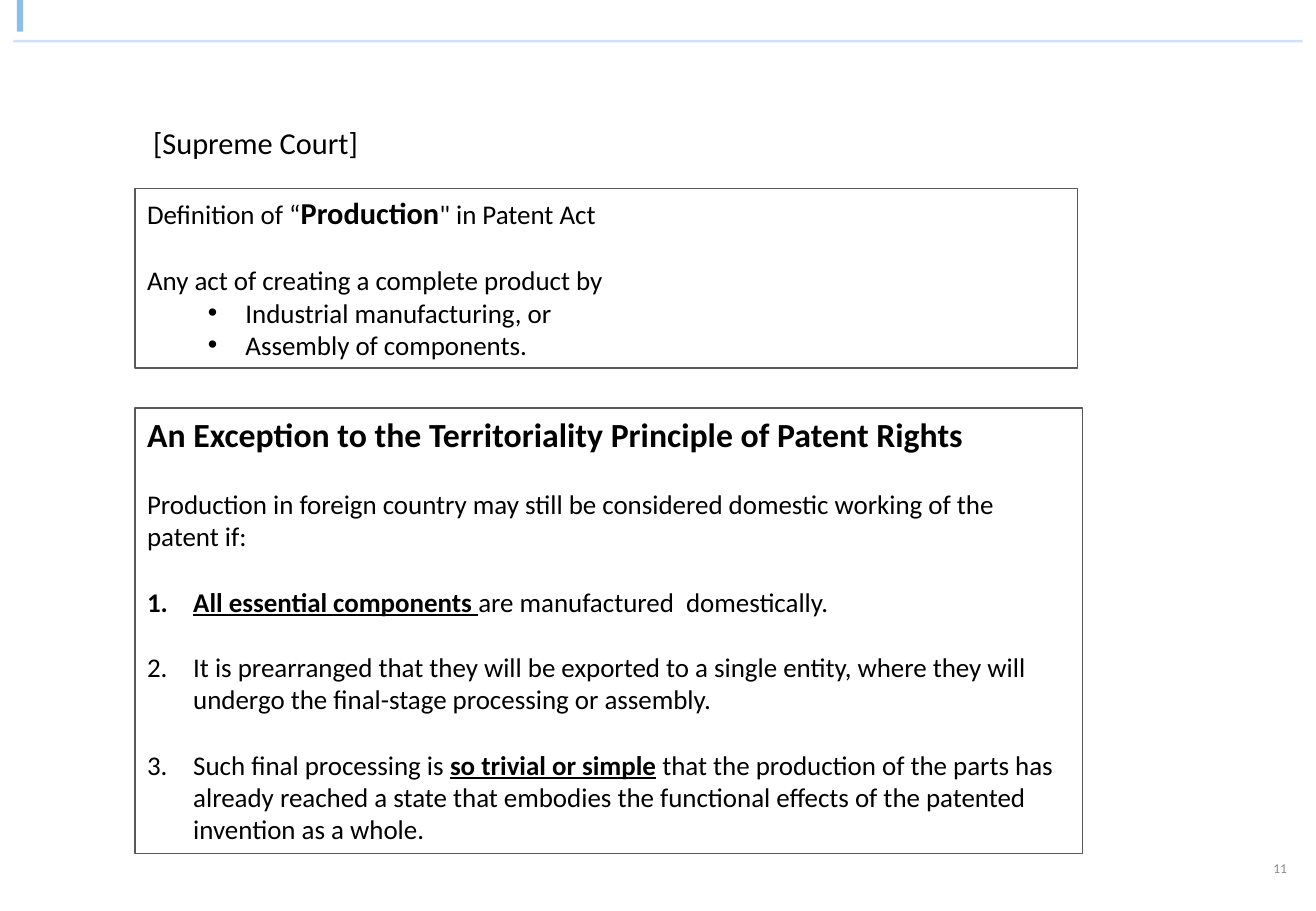
"""Build the slide on the Supreme Court's definition of production."""
from lxml import etree
from pptx import Presentation
from pptx import util as u
from pptx.dml.color import RGBColor
from pptx.enum import shapes, text
from pptx.oxml.ns import qn

presentation = Presentation()
presentation.slide_width = u.Inches(10.83)
presentation.slide_height = u.Inches(7.5)
slide = presentation.slides.add_slide(presentation.slide_layouts[3])

color = RGBColor.from_string


def percent(*lengths):
    """Turn alternating shares of the slide's width and height into lengths."""
    sides = (presentation.slide_width, presentation.slide_height)
    return [int(length * sides[i % 2] / 100) for i, length in enumerate(lengths)]


def write(paragraph, words, size=16, bold=False, underline=False, ink="000000"):
    """Add a formatted run of text to a paragraph."""
    run = paragraph.add_run()
    run.text = words
    run.font.name = "Calibri"
    run.font.size = u.Pt(size)
    run.font.bold = bold
    run.font.underline = underline
    run.font.color.rgb = color(ink)


accent = slide.shapes.add_shape(shapes.MSO_SHAPE.RECTANGLE, *percent(1.29, 0, 0.46, 3.47))
accent.shadow.inherit = False
accent.fill.solid()
accent.fill.fore_color.rgb = color("8DBEE9")
accent.line.fill.background()

rule = slide.shapes.add_connector(shapes.MSO_CONNECTOR.STRAIGHT, *percent(1.02, 4.53, 98.98, 4.53))
rule.line.color.rgb = color("658DF1")
rule.line.width = u.Pt(1.5)
etree.SubElement(next(rule.line._ln.iter(qn("a:srgbClr"))), qn("a:alpha"), val="28000")
etree.SubElement(rule._element.spPr, qn("a:effectLst"))

number = slide.shapes.add_textbox(*percent(76.18, 92.67, 22.53, 5.33))
number.text_frame.word_wrap = True
number.text_frame.vertical_anchor = text.MSO_ANCHOR.MIDDLE
number.text_frame.paragraphs[0].alignment = text.PP_ALIGN.RIGHT
write(number.text_frame.paragraphs[0], "11", size=8, ink="8C8C8C")

title = slide.shapes.title
title.left, title.top, title.width, title.height = percent(10.71, 12.93, 17.64, 5.33)
title.text_frame.word_wrap = False
title.text_frame.auto_size = text.MSO_AUTO_SIZE.NONE
title.text_frame.vertical_anchor = text.MSO_ANCHOR.TOP
title.text_frame.paragraphs[0].alignment = text.PP_ALIGN.LEFT
write(title.text_frame.paragraphs[0], "[Supreme Court]", size=18)

LINE_GAP = 19.5
STRONG = {"bold": True, "underline": True}
INDENTS = {"plain": (0, 0), "bullet": (0.81, -0.31), "number": (0.38, -0.38)}

definition = [
    ("plain", 0, [("Definition of “", {}), ("Production", {"size": 18, "bold": True}), ('" in Patent Act', {})]),
    ("plain", LINE_GAP, [("Any act of creating a complete product by", {})]),
    ("bullet", 0, [("Industrial manufacturing, or", {})]),
    ("bullet", 0, [("Assembly of components.", {})]),
]
exception = [
    ("plain", 0, [("An Exception to the Territoriality Principle of Patent Rights", {"size": 20, "bold": True})]),
    ("plain", LINE_GAP, [("Production in foreign country may still be considered domestic working of the patent if:", {})]),
    ("number", LINE_GAP, [("All essential components ", STRONG), ("are manufactured  domestically.", {})]),
    ("number", LINE_GAP, [("It is prearranged that they will be exported to a single entity, where they will "
                           "undergo the final-stage processing or assembly.", {})]),
    ("number", LINE_GAP, [("Such final processing is ", {}), ("so trivial or simple", STRONG),
                          (" that the production of the parts has already reached a state that embodies "
                           "the functional effects of the patented invention as a whole.", {})]),
]
boxes = [
    (1, percent(10.25, 20.67, 71.65, 19.73), definition),
    (2, percent(10.25, 44.8, 72.02, 48.93), exception),
]

for index, place, content in boxes:
    box = slide.placeholders[index]
    box.left, box.top, box.width, box.height = place
    box.line.color.rgb = color("595959")
    box.line.width = u.Pt(0.75)
    frame = box.text_frame
    frame.word_wrap = True
    frame.auto_size = text.MSO_AUTO_SIZE.NONE
    frame.vertical_anchor = text.MSO_ANCHOR.TOP
    for position, (kind, gap, runs) in enumerate(content):
        paragraph = frame.add_paragraph() if position else frame.paragraphs[0]
        paragraph.level = int(kind == "bullet")
        paragraph.space_before = u.Pt(gap)
        properties = paragraph._p.get_or_add_pPr()
        margin, indent = INDENTS[kind]
        properties.set("marL", str(u.Inches(margin)))
        properties.set("indent", str(u.Inches(indent)))
        if kind == "bullet":
            etree.SubElement(properties, qn("a:buFont"), typeface="Arial")
            etree.SubElement(properties, qn("a:buChar"), char="•")
        elif kind == "number":
            etree.SubElement(properties, qn("a:buFont"), typeface="Calibri")
            etree.SubElement(properties, qn("a:buAutoNum"), type="arabicPeriod")
        else:
            etree.SubElement(properties, qn("a:buNone"))
        for words, style in runs:
            write(paragraph, words, **style)

presentation.save("out.pptx")
